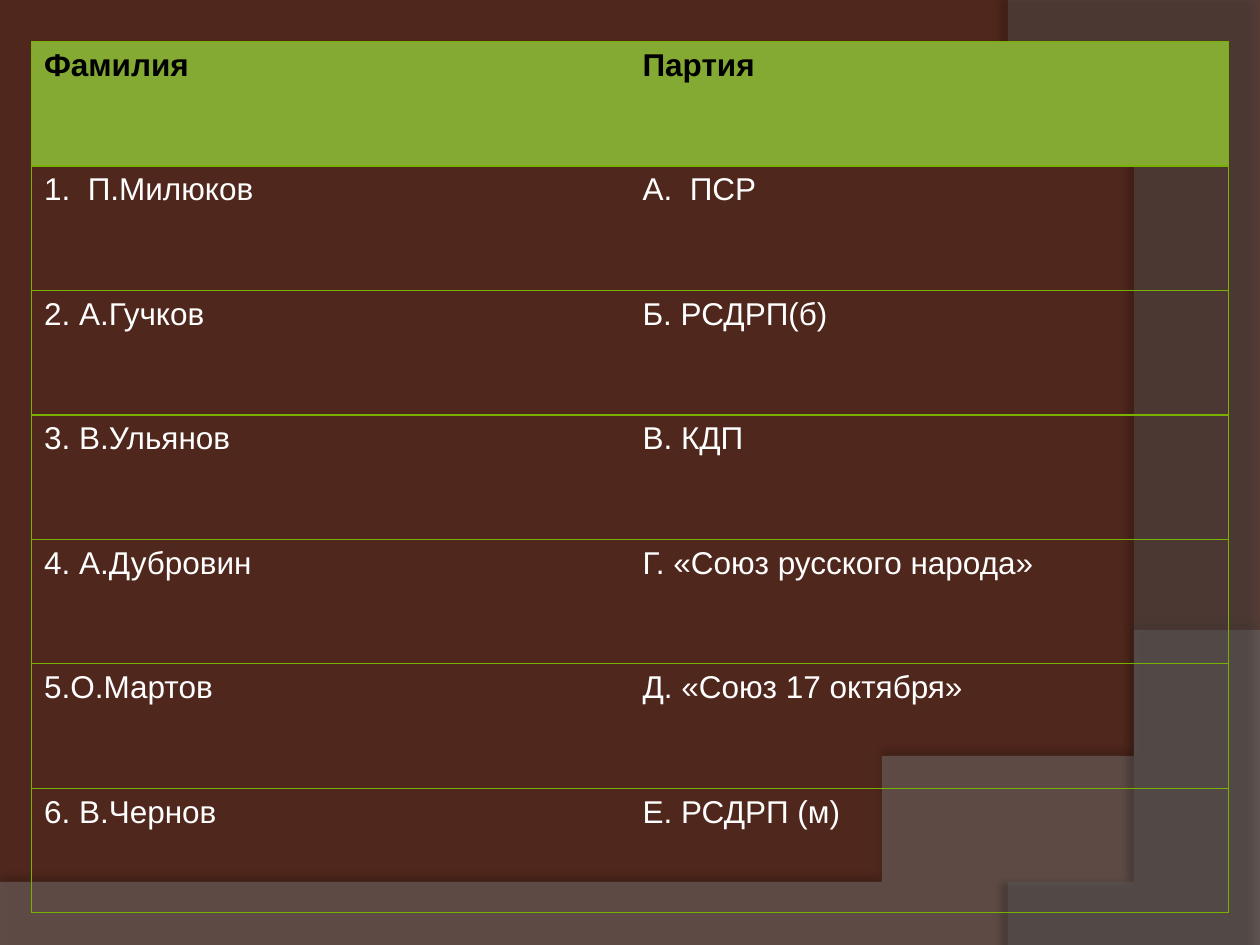
import pptx
import pptx.dml.color
import pptx.oxml
import pptx.oxml.ns
import pptx.util

WIDE, HIGH = 10, 7.5
ROWS = [
    ("Фамилия", "Партия"),
    ("1.  П.Милюков", "А.  ПСР"),
    ("2. А.Гучков", "Б. РСДРП(б)"),
    ("3. В.Ульянов", "В. КДП"),
    ("4. А.Дубровин", "Г. «Союз русского народа»"),
    ("5.О.Мартов", "Д. «Союз 17 октября»"),
    ("6. В.Чернов", "Е. РСДРП (м)"),
]


def tint(code):
    """Turn a hex string into a colour."""
    return pptx.dml.color.RGBColor.from_string(code)


def node(body):
    """Parse a DrawingML element given without its namespace."""
    space = pptx.oxml.ns.nsdecls("a")
    return pptx.oxml.parse_xml(body.replace(" ", f" {space} ", 1))


def write(frame, text, font="Arial", size=18, color="FFFFFF", bold=False):
    """Put one formatted run of text into a frame."""
    run = frame.paragraphs[0].add_run()
    run.text = text
    run.font.name = font
    run.font.size = pptx.util.Pt(size)
    run.font.color.rgb = tint(color)
    run.font.bold = bold


def curve(start, pull, push, end, steps=60):
    """List the points of a cubic curve after its start."""
    points = []
    for step in range(1, steps + 1):
        t = step / steps
        parts = ((1 - t) ** 3, 3 * t * (1 - t) ** 2, 3 * t * t * (1 - t), t ** 3)
        knots = (start, pull, push, end)
        points.append(tuple(sum(p * k[i] for p, k in zip(parts, knots)) for i in (0, 1)))
    return points


class Deck:
    """Hold the style and the current slide."""

    line, head, back = "78B100", "84AA33", "4F271C"

    def __init__(self):
        """Start a deck with one plain slide."""
        self.show = pptx.Presentation()
        self.show.slide_width = pptx.util.Inches(WIDE)
        self.show.slide_height = pptx.util.Inches(HIGH)
        self.slide = self.show.slides.add_slide(self.show.slide_layouts[6])
        fill = self.slide.background.fill
        fill.solid()
        fill.fore_color.rgb = tint(self.back)

    def wave(self, points, color, alpha, shade, gap, turn):
        """Draw a clear outline with a soft shadow."""
        pen = self.slide.shapes.build_freeform(*points[0], scale=pptx.util.Inches(1))
        pen.add_line_segments(points[1:], close=True)
        shape = pen.convert_to_shape()
        shape.shadow.inherit = False
        shape.line.fill.background()
        shape.fill.solid()
        shape.fill.fore_color.rgb = tint(color)
        props = shape.element.spPr
        props.find(".//" + pptx.oxml.ns.qn("a:srgbClr")).append(
            node(f'<a:alpha val="{alpha * 1000}"/>'))
        props.find(pptx.oxml.ns.qn("a:effectLst")).append(node(
            f'<a:outerShdw blurRad="{pptx.util.Pt(4)}" dist="{pptx.util.Pt(gap)}"'
            f' dir="{turn * 60000}" algn="ctr" rotWithShape="0"><a:srgbClr val="000000">'
            f'<a:alpha val="{shade * 1000}"/></a:srgbClr></a:outerShdw>'))

    def edge(self, cell, sides):
        """Rule the named sides of a cell and clear the others."""
        props = cell._tc.get_or_add_tcPr()
        for side in "LRTB":
            paint = (f'<a:solidFill><a:srgbClr val="{self.line}"/></a:solidFill>'
                     if side in sides else "<a:noFill/>")
            props.append(node(f'<a:ln{side} w="{pptx.util.Pt(0.75)}">{paint}</a:ln{side}>'))

    def grid(self, rows, left, top, width, height):
        """Add a ruled table placed by shares of the slide."""
        wide, high = self.show.slide_width, self.show.slide_height
        count = len(rows[0])
        box = self.slide.shapes.add_table(
            len(rows), count, int(left * wide), int(top * high),
            int(width * wide), int(height * high))
        table = box.table
        table.first_row = table.horz_banding = False
        for y, row in enumerate(rows):
            for x, text in enumerate(row):
                cell = table.cell(y, x)
                sides = "TB" + "L" * (x == 0) + "R" * (x == count - 1)
                self.edge(cell, sides)
                if y == 0:
                    cell.fill.solid()
                    cell.fill.fore_color.rgb = tint(self.head)
                else:
                    cell.fill.background()
                write(cell.text_frame, text, bold=y == 0,
                      color="FFFFFF" if y else "000000")


def main():
    """Build and save the slide."""
    deck = Deck()
    swell = curve((WIDE, 5.2), (5.59, 7.29), (3.91, 7.19), (0, 7.05))
    deck.wave([(0, HIGH), (WIDE, HIGH), (WIDE, 5.2)] + swell,
              "7F7F7F", 45, shade=35, gap=3.5, turn=270)
    bend = curve((8.21, HIGH), (9.35, 6.19), (10.18, 3), (8, 0))
    deck.wave([(WIDE, 0.02), (WIDE, HIGH), (8.21, HIGH)] + bend,
              "5E5E5E", 40, shade=45, gap=4, turn=180)
    deck.grid(ROWS, left=0.025, top=0.044, width=0.95, height=0.922)
    deck.show.save("out.pptx")


if __name__ == "__main__":
    main()
